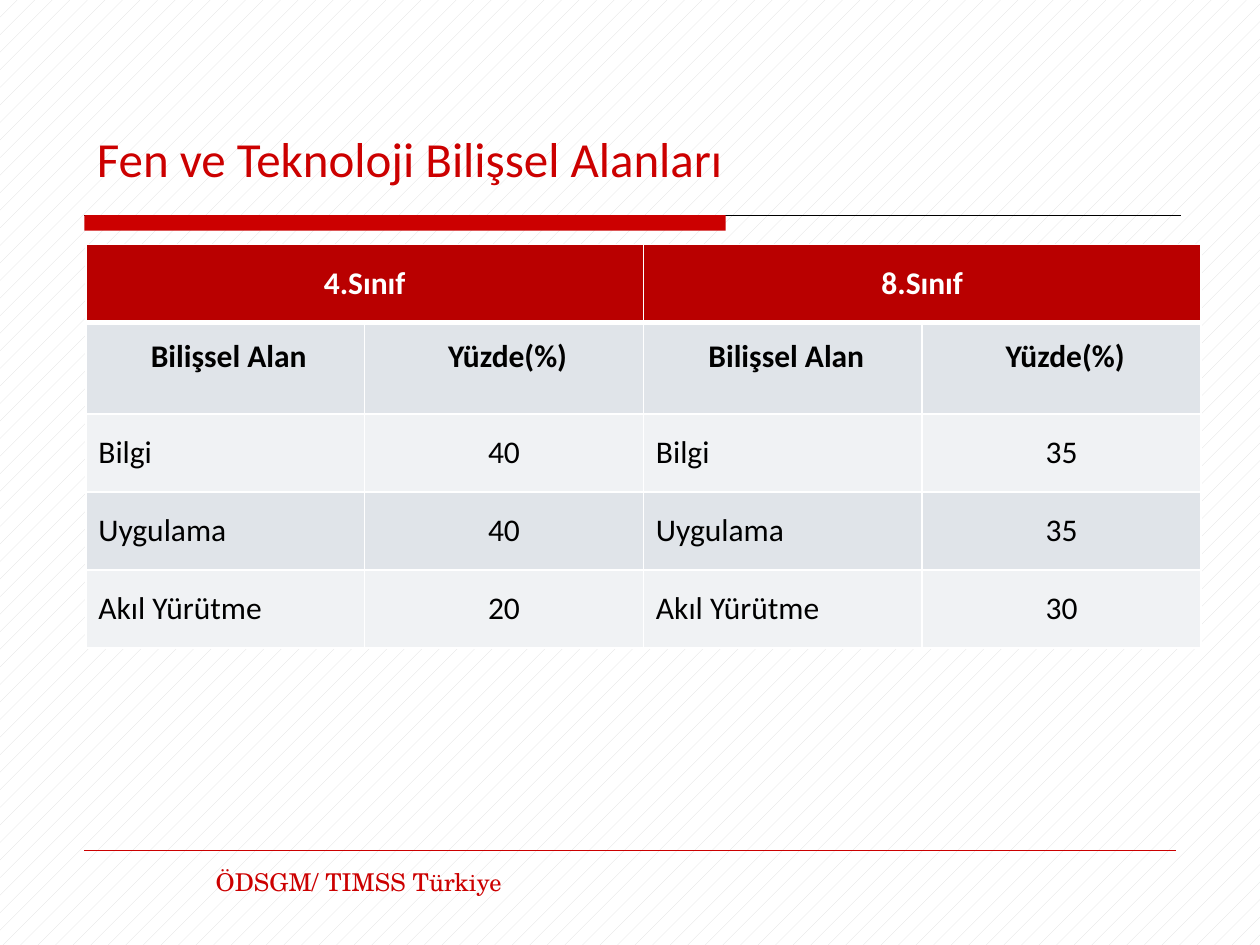
from lxml import etree
from pptx import Presentation
from pptx.dml.color import RGBColor
from pptx.enum import dml, shapes, text
from pptx.oxml import ns
from pptx.util import Cm, Pt

# Content
TITLE = "Fen ve Teknoloji Bilişsel Alanları"
FOOTER = "ÖDSGM/ TIMSS Türkiye"
GRADES = ["4.Sınıf", "8.Sınıf"]
COLUMN_HEADS = ["Bilişsel Alan", "Yüzde(%)"]
DOMAINS = [("Bilgi", 40, 35), ("Uygulama", 40, 35), ("Akıl Yürütme", 20, 30)]

# Style
RED = RGBColor(0xCC, 0x00, 0x00)
HEADER_RED = RGBColor(0xB9, 0x00, 0x00)
DARK_BAND = RGBColor(0xE0, 0xE4, 0xE9)
LIGHT_BAND = RGBColor(0xF0, 0xF2, 0xF4)
PATTERN_GREY = RGBColor(0xDD, 0xDD, 0xDD)
WHITE = RGBColor(0xFF, 0xFF, 0xFF)
BLACK = RGBColor(0x00, 0x00, 0x00)
LEFT = Cm(1.7)
COLUMN_WIDTH = Cm(5.62)
ROW_HEIGHTS = [Cm(1.57), Cm(1.85), Cm(1.57), Cm(1.57), Cm(1.57)]
CENTER, START = text.PP_ALIGN.CENTER, text.PP_ALIGN.LEFT
MIDDLE, TOP = text.MSO_ANCHOR.MIDDLE, text.MSO_ANCHOR.TOP


def write(frame, words, size=18, color=BLACK, bold=False, font="Calibri", align=START):
    paragraph = frame.paragraphs[0]
    paragraph.alignment = align
    run = paragraph.add_run()
    run.text = words
    run.font.size, run.font.name, run.font.bold = Pt(size), font, bold
    run.font.color.rgb = color


def add_rule(slide, y, right, color, width):
    rule = slide.shapes.add_connector(shapes.MSO_CONNECTOR.STRAIGHT, LEFT, y, right, y)
    rule.line.color.rgb = color
    rule.line.width = Pt(width)
    etree.SubElement(rule._element.spPr, ns.qn("a:effectLst"))


def style_cell(cell, fill, bottom_width=1):
    properties = cell._tc.get_or_add_tcPr()
    for side, width in (("L", 1), ("R", 1), ("T", 1), ("B", bottom_width)):
        border = etree.SubElement(properties, ns.qn(f"a:ln{side}"), w=str(Pt(width)))
        solid = etree.SubElement(border, ns.qn("a:solidFill"))
        etree.SubElement(solid, ns.qn("a:srgbClr"), val=str(WHITE))
    cell.fill.solid()
    cell.fill.fore_color.rgb = fill


presentation = Presentation()
presentation.slide_width, presentation.slide_height = Cm(25.4), Cm(19.05)
slide = presentation.slides.add_slide(presentation.slide_layouts[5])

# Background
background = slide.background.fill
background.patterned()
background.pattern = dml.MSO_PATTERN.PERCENT_5
background.fore_color.rgb = PATTERN_GREY
background.back_color.rgb = WHITE

# Title bar and rules
add_rule(slide, Cm(4.34), Cm(23.8), BLACK, 0.75)
bar = slide.shapes.add_shape(shapes.MSO_SHAPE.RECTANGLE, LEFT, Cm(4.34), Cm(12.93), Cm(0.31))
bar.shadow.inherit = False
bar.fill.solid()
bar.fill.fore_color.rgb = RED
bar.line.fill.background()
add_rule(slide, Cm(17.14), Cm(23.7), RED, 0.25)

# Title
title = slide.shapes.title
title.left, title.top, title.width, title.height = LEFT, Cm(2.31), Cm(22.43), Cm(1.6)
title.text_frame.vertical_anchor = text.MSO_ANCHOR.BOTTOM
write(title.text_frame, TITLE, size=28, color=RED)

# Table: each grade takes two columns
column_count = len(GRADES) * len(COLUMN_HEADS)
table = slide.shapes.add_table(len(ROW_HEIGHTS), column_count, Cm(1.73), Cm(4.93),
                               COLUMN_WIDTH * column_count, sum(ROW_HEIGHTS)).table
for column in table.columns:
    column.width = COLUMN_WIDTH
for row, height in zip(table.rows, ROW_HEIGHTS):
    row.height = height

for index in range(column_count):
    style_cell(table.cell(0, index), HEADER_RED, bottom_width=3)
for index, grade in enumerate(GRADES):
    cell = table.cell(0, 2 * index)
    cell.merge(table.cell(0, 2 * index + 1))
    cell.vertical_anchor = MIDDLE
    write(cell.text_frame, grade, color=WHITE, bold=True, align=CENTER)

for index, head in enumerate(COLUMN_HEADS * len(GRADES)):
    cell = table.cell(1, index)
    style_cell(cell, DARK_BAND)
    cell.vertical_anchor = TOP
    cell.margin_left, cell.margin_top, cell.margin_bottom = Cm(0.4), Cm(0.3), 0
    write(cell.text_frame, head, bold=True, align=CENTER)

for row_index, (domain, *shares) in enumerate(DOMAINS, start=2):
    values = [value for share in shares for value in (domain, str(share))]
    for index, value in enumerate(values):
        cell = table.cell(row_index, index)
        style_cell(cell, DARK_BAND if row_index % 2 else LIGHT_BAND)
        cell.vertical_anchor = MIDDLE
        write(cell.text_frame, value, align=CENTER if index % 2 else START)

# Footer
footer = slide.shapes.add_textbox(Cm(4.1), Cm(17.35), Cm(15.75), Cm(1.32))
footer.text_frame.word_wrap = True
write(footer.text_frame, FOOTER, size=14, color=RED, font="TeX Gyre Schola")

presentation.save("out.pptx")
